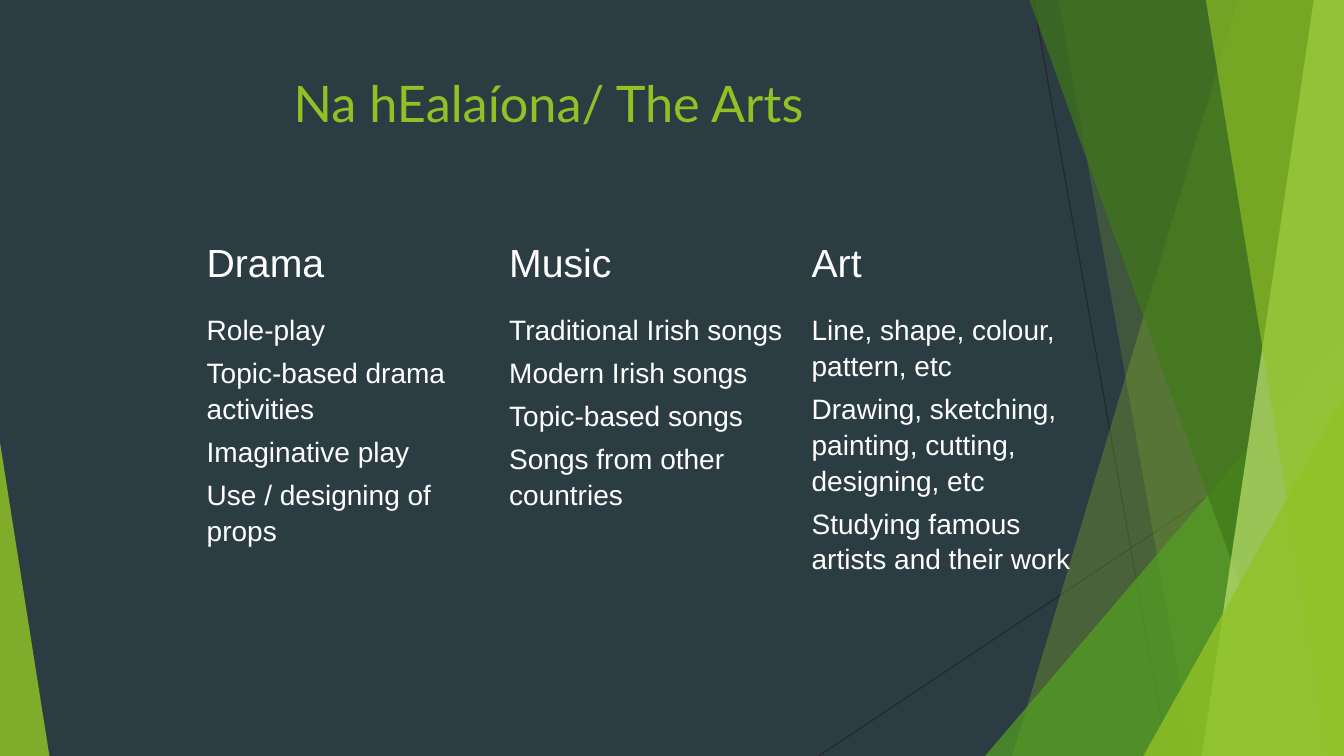
from pptx import Presentation
from pptx import util as u
from pptx.dml.color import RGBColor
from pptx.enum import shapes, text
from pptx.oxml.ns import qn
from lxml import etree

PX = 9144  # EMU per px, 100 px to the inch
WIDTH, HEIGHT = 1333, 750

SLATE = RGBColor(0x2C, 0x3C, 0x43)
CHARCOAL = RGBColor(0x26, 0x26, 0x26)
LIME = RGBColor(0x90, 0xC2, 0x26)
GREEN = RGBColor(0x54, 0xA0, 0x21)
FOREST = RGBColor(0x3F, 0x78, 0x18)
PALE_LIME = RGBColor(0xBF, 0xE4, 0x71)
WHITE = RGBColor(0xFF, 0xFF, 0xFF)

ARTS = {
    "Drama": ["Role-play", "Topic-based drama activities",
              "Imaginative play", "Use / designing of props"],
    "Music": ["Traditional Irish songs", "Modern Irish songs",
              "Topic-based songs", "Songs from other countries"],
    "Art": ["Line, shape, colour, pattern, etc",
            "Drawing, sketching, painting, cutting, designing, etc",
            "Studying famous artists and their work"],
}


def px(*lengths):
    return [u.Emu(length * PX) for length in lengths]


def paint(facet, color, opacity):
    """Fill a facet with a see-through colour, without line or shadow."""
    facet.shadow.inherit = False
    facet.line.fill.background()
    facet.fill.solid()
    facet.fill.fore_color.rgb = color
    tint = facet.fill._xPr.find(qn("a:solidFill"))[0]
    etree.SubElement(tint, qn("a:alpha"), val=str(opacity * 1000))


def add_ray(slide, start, end):
    ray = slide.shapes.add_connector(
        shapes.MSO_CONNECTOR.STRAIGHT, *px(*start, *end))
    ray.line.color.rgb = CHARCOAL
    ray.line.width = u.Pt(0.75)
    etree.SubElement(ray._element.spPr, qn("a:effectLst"))


def add_band(slide, top_x, bottom_x, color, opacity):
    """Full-height band from a slanted left edge to the slide's right edge."""
    outline = slide.shapes.build_freeform(top_x, 0, scale=PX)
    outline.add_line_segments(
        [(WIDTH, 0), (WIDTH, HEIGHT), (bottom_x, HEIGHT)], close=True)
    paint(outline.convert_to_shape(), color, opacity)


def add_corner(slide, left, top, width, apex, color, opacity):
    """Triangle standing on the bottom edge of the slide."""
    corner = slide.shapes.add_shape(
        shapes.MSO_SHAPE.ISOSCELES_TRIANGLE,
        *px(left, top, width, HEIGHT - top))
    corner.adjustments[0] = apex
    paint(corner, color, opacity)


def add_backdrop(slide):
    slide.background.fill.solid()
    slide.background.fill.fore_color.rgb = SLATE
    add_ray(slide, (1025, 0), (1158, HEIGHT))
    add_ray(slide, (WIDTH, 403), (812, HEIGHT))
    add_band(slide, 1228, 1004, LIME, 29)
    add_band(slide, 1050, 1183, LIME, 20)
    add_corner(slide, 977, 333, 356, 1, GREEN, 71)
    add_band(slide, 1021, 1291, FOREST, 69)
    add_band(slide, 1303, 1192, PALE_LIME, 69)
    add_band(slide, 1196, 1318, LIME, 64)
    add_corner(slide, 1134, 393, 199, 1, LIME, 80)
    add_corner(slide, 0, 439, 49, 0, LIME, 84)


def style_font(paragraph, name, size, color):
    for run in paragraph.runs:
        run.font.name = name
        run.font.size = u.Pt(size)
        run.font.color.rgb = color


def add_title(slide, wording):
    title = slide.shapes.title
    title.left, title.top, title.width, title.height = px(74, 67, 940, 144)
    frame = title.text_frame
    frame.text = wording
    frame.vertical_anchor = text.MSO_ANCHOR.TOP
    frame.paragraphs[0].alignment = text.PP_ALIGN.CENTER
    style_font(frame.paragraphs[0], "Lato", 36, LIME)
    # Bring the title in front of the backdrop
    slide.shapes._spTree.append(title._element)


def fill_cell(cell, lines, size):
    cell.margin_left = cell.margin_right = u.Inches(0.1)
    cell.margin_top = cell.margin_bottom = u.Inches(0.1)
    cell.text_frame.text = "\n".join(lines)
    for index, paragraph in enumerate(cell.text_frame.paragraphs):
        paragraph.line_spacing = 1.15
        paragraph.space_before = u.Pt(5 if index else 0)
        style_font(paragraph, "Arial", size, WHITE)
    # No borders, no fill
    properties = cell._tc.get_or_add_tcPr()
    for side in ("a:lnL", "a:lnR", "a:lnT", "a:lnB"):
        border = etree.SubElement(properties, qn(side))
        etree.SubElement(border, qn("a:noFill"))
    cell.fill.background()


def add_arts_table(slide):
    table = slide.shapes.add_table(
        2, len(ARTS), *px(195, 224, 900, 464)).table
    table.first_row = table.horz_banding = False
    table.rows[0].height, table.rows[1].height = px(74, 390)
    for column, (art, activities) in enumerate(ARTS.items()):
        fill_cell(table.cell(0, column), [art], 28)
        fill_cell(table.cell(1, column), activities, 20)


def main():
    deck = Presentation()
    deck.slide_width, deck.slide_height = px(WIDTH, HEIGHT)
    slide = deck.slides.add_slide(deck.slide_layouts.get_by_name("Title Only"))
    add_backdrop(slide)
    add_title(slide, "Na hEalaíona/ The Arts")
    add_arts_table(slide)
    deck.save("out.pptx")


if __name__ == "__main__":
    main()
